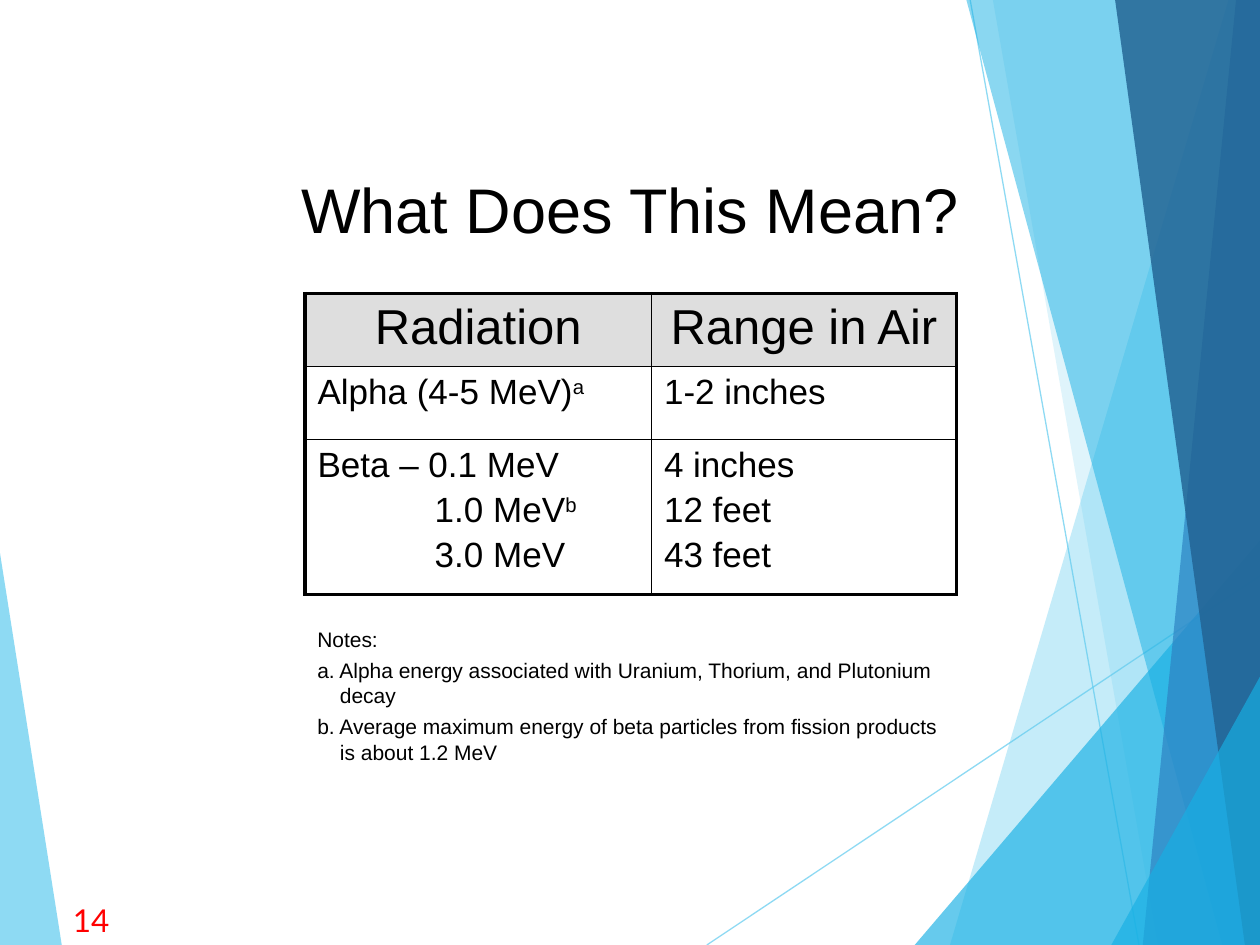
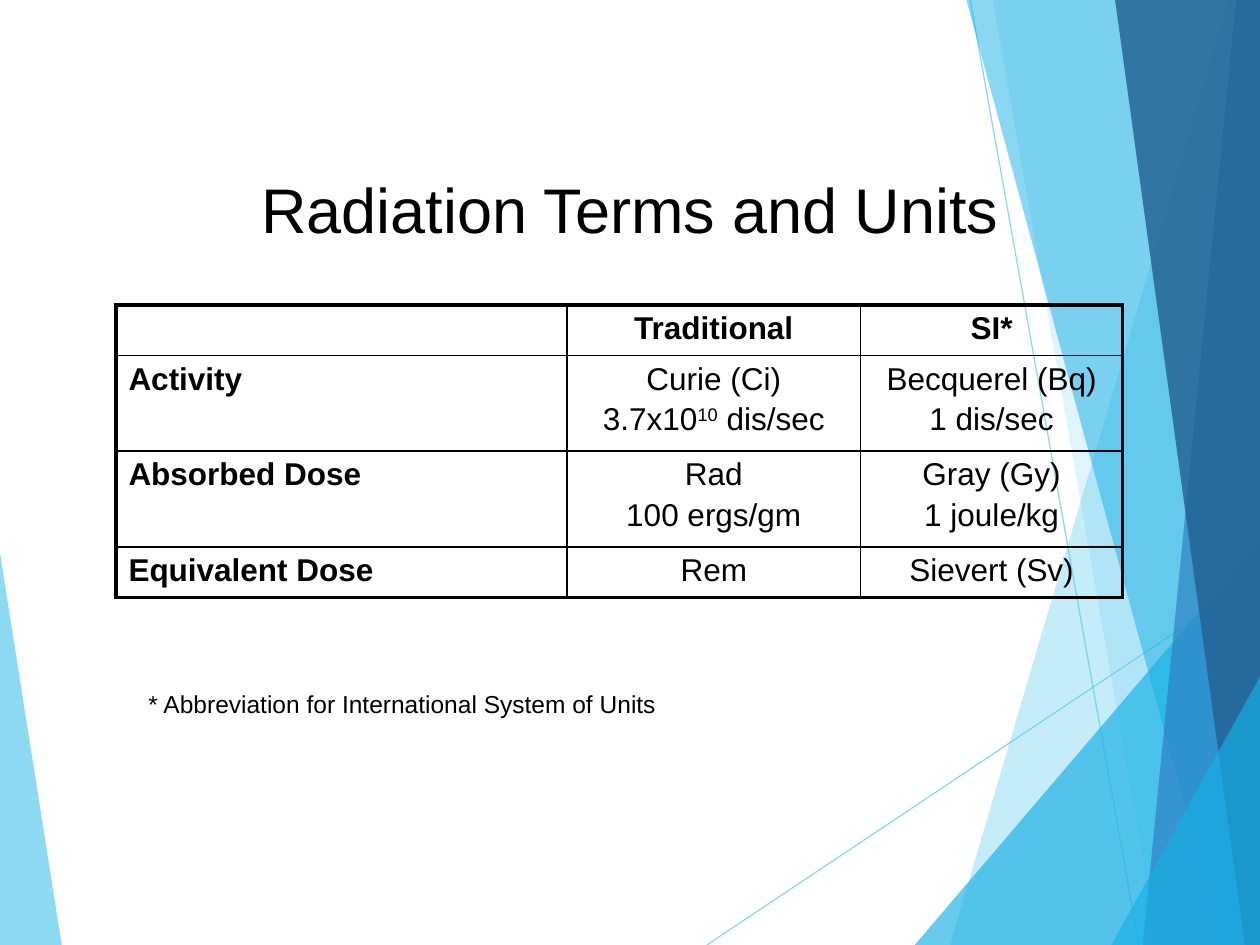
"""Build two slides on radiation range and units."""
from dataclasses import dataclass

from lxml.etree import SubElement as Sub
from pptx import Presentation
from pptx.dml.color import RGBColor as Rgb
from pptx.enum.shapes import MSO_CONNECTOR as Con
from pptx.enum.text import PP_ALIGN as Al
from pptx.oxml.ns import qn
from pptx.util import Pt

UNIT = 9144
WIDE, TALL = 1000, 750


def px(num):
    return num * UNIT


@dataclass(frozen=True)
class Theme:
    font: str = "Arial"
    num_font: str = "Lato"
    ink: str = "000000"
    red: str = "FF0000"
    gray: str = "BFBFBF"
    sky: str = "5FCBEF"
    cyan: str = "17B0E4"
    blue: str = "2E83C3"
    navy: str = "226292"
    title: int = 36
    head: int = 28
    body: int = 20
    base: int = 18
    foot: int = 14
    note: int = 12
    thick: float = 2.25
    thin: float = 1
    hair: float = 0.75


LOOK = Theme()

RAYS = [
    ([(561, 750), (1000, 457)], LOOK.sky, 70),
    ([(770, 0), (904, 750)], LOOK.sky, 70),
]
BANDS = [
    ([(975, 0), (754, 750), (1000, 750), (1000, 0)], LOOK.sky, 36),
    ([(788, 0), (919, 750), (1000, 750), (1000, 0)], LOOK.sky, 20),
    ([(726, 750), (1000, 429), (1000, 750)], LOOK.cyan, 66),
    ([(767, 0), (970, 750), (1000, 750), (1000, 0)], LOOK.cyan, 50),
    ([(981, 0), (907, 750), (1000, 750), (1000, 0)], LOOK.blue, 70),
    ([(885, 0), (988, 750), (1000, 750), (1000, 0)], LOOK.navy, 82),
    ([(882, 750), (1000, 537), (1000, 750)], LOOK.cyan, 66),
]
WEDGE = ([(0, 439), (49, 750), (0, 750)], LOOK.sky, 70)


def fade(node, rate):
    for tint in node.iter(qn("a:srgbClr")):
        Sub(tint, qn("a:alpha"), val=str(rate * 1000))


def write(frame, text, size=LOOK.base, font=LOOK.font, ink=LOOK.ink,
          bold=False, align=Al.LEFT, gap=0, hang=0):
    """Fill a frame; ^ marks raised text, a leading tab an indented line."""
    frame.word_wrap = True
    for i, line in enumerate(text.split("\n")):
        para = frame.add_paragraph() if i else frame.paragraphs[0]
        para.alignment = align
        para.space_before = Pt(gap if i else 0)
        if hang:
            props = para._p.get_or_add_pPr()
            props.set("marL", str(px(hang)))
            props.set("indent", str(0 if line.startswith("\t") else -px(hang)))
        for j, part in enumerate(line.strip("\t").split("^")):
            if not part:
                continue
            run = para.add_run()
            run.text = part
            run.font.size, run.font.name, run.font.bold = Pt(size), font, bold
            run.font.color.rgb = Rgb.from_string(ink)
            if j % 2:
                run.font._element.set("baseline", "30000")


class Deck:
    def __init__(self, look):
        self.look = look
        self.show = Presentation()
        self.show.slide_width, self.show.slide_height = px(WIDE), px(TALL)
        self.slide = None

    def page(self, title):
        self.slide = self.show.slides.add_slide(self.show.slide_layouts[6])
        self.band(*WEDGE)
        for ray in RAYS:
            self.ray(*ray)
        for band in BANDS:
            self.band(*band)
        self.text(title, 50, 130, 900, 62, size=self.look.title, align=Al.CENTER)

    def band(self, dots, tint, rate):
        pen = self.slide.shapes.build_freeform(*dots[0], scale=UNIT)
        pen.add_line_segments(dots[1:], close=True)
        form = pen.convert_to_shape()
        form.shadow.inherit = False
        form.fill.solid()
        form.fill.fore_color.rgb = Rgb.from_string(tint)
        form.line.fill.background()
        fade(form._element.spPr, rate)

    def ray(self, ends, tint, rate):
        spots = [px(num) for dot in ends for num in dot]
        line = self.slide.shapes.add_connector(Con.STRAIGHT, *spots)
        line.line.width = Pt(self.look.hair)
        line.line.color.rgb = Rgb.from_string(tint)
        fade(line._element.spPr, rate)
        Sub(line._element.spPr, qn("a:effectLst"))

    def text(self, text, x, y, w, h, **form):
        box = self.slide.shapes.add_textbox(px(x), px(y), px(w), px(h))
        write(box.text_frame, text, **form)

    def edge(self, cell, side, width):
        line = Sub(cell._tc.get_or_add_tcPr(), qn("a:ln" + side), w=str(Pt(width)))
        Sub(Sub(line, qn("a:solidFill")), qn("a:srgbClr"), val=self.look.ink)

    def table(self, x, y, cols, rows, cells, style, shade=False):
        last_r, last_c = len(rows) - 1, len(cols) - 1
        grid = self.slide.shapes.add_table(
            len(rows), len(cols), px(x), px(y), px(sum(cols)), px(sum(rows))).table
        grid.first_row = grid.horz_banding = False
        for col, wide in zip(grid.columns, cols):
            col.width = px(wide)
        for row, tall in zip(grid.rows, rows):
            row.height = px(tall)
        for r, line in enumerate(cells):
            for c, text in enumerate(line):
                cell = grid.cell(r, c)
                outer = {"L": c == 0, "R": c == last_c, "T": r == 0, "B": r == last_r}
                for side, rim in outer.items():
                    self.edge(cell, side, self.look.thick if rim else self.look.thin)
                if shade and r == 0:
                    cell.fill.solid()
                    cell.fill.fore_color.rgb = Rgb.from_string(self.look.gray)
                    fade(cell._tc.tcPr.find(qn("a:solidFill")), 50)
                else:
                    cell.fill.background()
                form = style(r, c)
                write(cell.text_frame, text, gap=form["size"] / 6, **form)


def range_style(row, col):
    if row == 0:
        return dict(size=LOOK.head, align=Al.CENTER)
    return dict(size=LOOK.body, hang=0 if col else 93)


def unit_style(row, col):
    return dict(size=LOOK.base, bold=row == 0 or col == 0,
                align=Al.CENTER if col else Al.LEFT)


def main():
    deck = Deck(LOOK)

    deck.page("What Does This Mean?")
    deck.table(242, 233, [275, 242], [58, 58, 123], [
        ["Radiation", "Range in Air"],
        ["Alpha (4-5 MeV)^a", "1-2 inches"],
        ["Beta – 0.1 MeV\n\t1.0 MeV^b^\n\t3.0 MeV", "4 inches\n12 feet\n43 feet"],
    ], range_style, shade=True)
    deck.text("Notes:\n"
              "a. Alpha energy associated with Uranium, Thorium, and Plutonium decay\n"
              "b. Average maximum energy of beta particles from fission products "
              "is about 1.2 MeV",
              242, 492, 520, 121, size=LOOK.note, gap=3.5, hang=18)
    deck.text("14", 48, 710, 52, 40, font=LOOK.num_font, ink=LOOK.red)

    deck.page("Radiation Terms and Units")
    deck.table(92, 242, [358, 233, 208], [40, 76, 76, 40], [
        ["", "Traditional", "SI*"],
        ["Activity", "Curie (Ci)\n3.7x10^10^ dis/sec", "Becquerel (Bq)\n1 dis/sec"],
        ["Absorbed Dose", "Rad\n100 ergs/gm", "Gray (Gy)\n1 joule/kg"],
        ["Equivalent Dose", "Rem", "Sievert (Sv)"],
    ], unit_style)
    deck.text("* Abbreviation for International System of Units",
              108, 542, 430, 33, size=LOOK.foot)

    deck.show.save("out.pptx")


if __name__ == "__main__":
    main()
